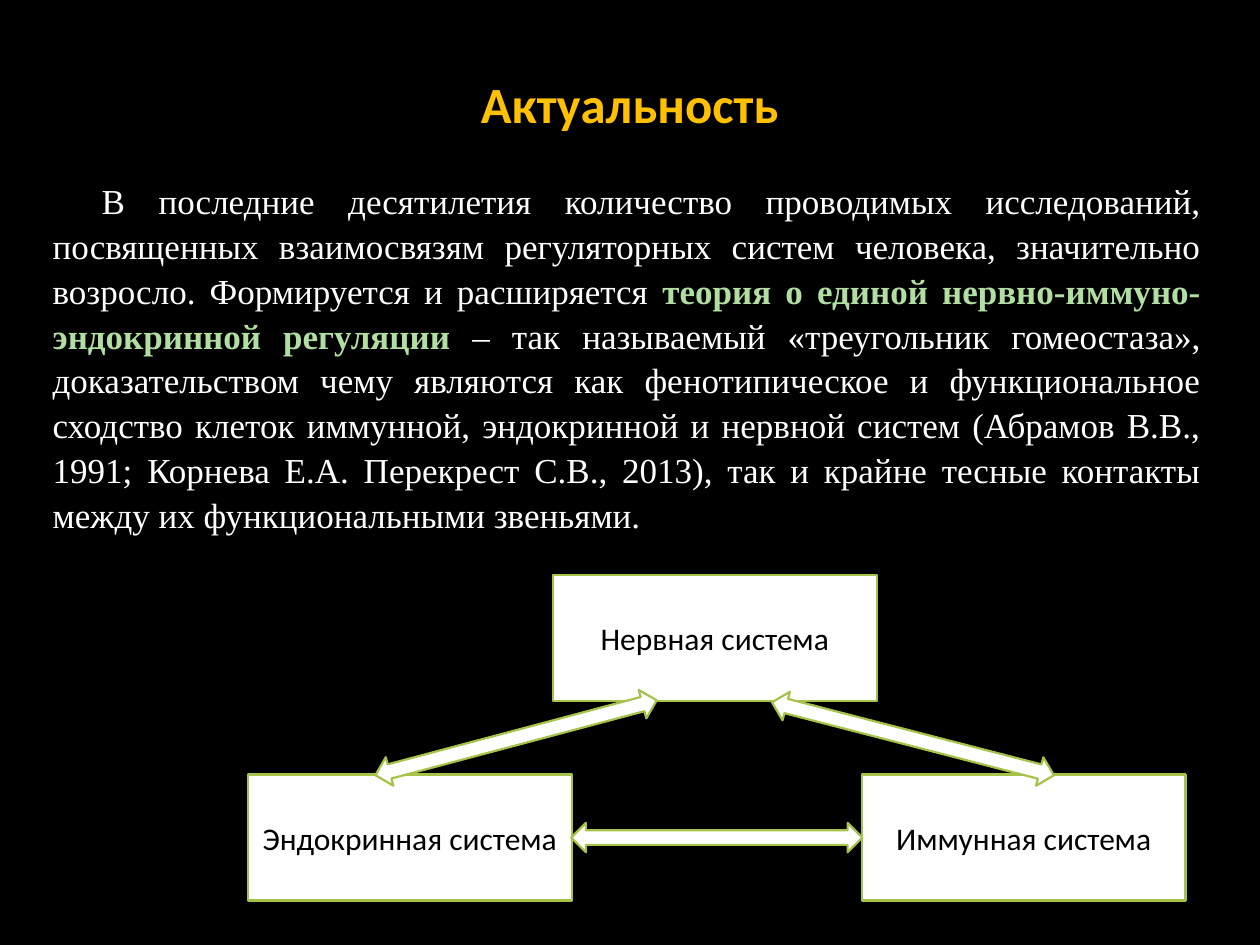
"""Build the slide on the links between the nervous, endocrine and immune systems."""
from pptx import Presentation
from pptx import util as u
from pptx.dml import color
from pptx.enum import shapes, text

COLORS = {
    "background": "000000",
    "title": "FFC000",
    "body": "FFFFFF",
    "accent": "B0DFA1",
    "fill": "FFFFFF",
    "outline": "A5C249",
    "label": "000000",
}
TITLE = [("Актуальность", "title", True)]
BODY = [
    ("В последние десятилетия количество проводимых исследований, посвященных "
     "взаимосвязям регуляторных систем человека, значительно возросло. "
     "Формируется и расширяется ", "body", False),
    ("теория о единой нервно-иммуно-эндокринной регуляции", "accent", True),
    (" – так называемый «треугольник гомеостаза», доказательством чему являются "
     "как фенотипическое и функциональное сходство клеток иммунной, эндокринной "
     "и нервной систем (Абрамов В.В., 1991; Корнева Е.А. Перекрест С.В., 2013), "
     "так и крайне тесные контакты между их функциональными звеньями.", "body", False),
]
BOX_SIZE = (185, 72)
SYSTEMS = [
    ("Эндокринная система", 141.7, 442.6),
    ("Нервная система", 316, 328.8),
    ("Иммунная система", 492.5, 442.6),
]
ARROW_SIZE = (166.4, 16.8)
ARROWS = [(326.4, 470.2, 0), (211.7, 413.2, -14.9), (438.5, 413.8, 14.5)]


def rgb(name):
    return color.RGBColor.from_string(COLORS[name])


def write(box, spans, size, font="Calibri", align=text.PP_ALIGN.CENTER,
          anchor=text.MSO_ANCHOR.MIDDLE, indent=0, spacing=None, after=0):
    frame = box.text_frame
    frame.word_wrap = True
    frame.vertical_anchor = anchor
    para = frame.paragraphs[0]
    para.alignment = align
    para.space_after = u.Pt(after)
    if spacing:
        para.line_spacing = spacing
    if indent:
        properties = para._p.get_or_add_pPr()
        properties.set("marL", "0")
        properties.set("indent", str(u.Pt(indent)))
    for words, ink, bold in spans:
        span = para.add_run()
        span.text = words
        span.font.name = font
        span.font.size = u.Pt(size)
        span.font.bold = bold
        span.font.color.rgb = rgb(ink)


def add_outlined(page, kind, left, top, size):
    shape = page.shapes.add_shape(kind, *map(u.Pt, (left, top, *size)))
    shape.shadow.inherit = False
    shape.fill.solid()
    shape.fill.fore_color.rgb = rgb("fill")
    shape.line.color.rgb = rgb("outline")
    shape.line.width = u.Pt(1.25)
    return shape


def main():
    deck = Presentation()
    deck.slide_width, deck.slide_height = u.Pt(720), u.Pt(540)
    page = deck.slides.add_slide(deck.slide_layouts[6])
    page.background.fill.solid()
    page.background.fill.fore_color.rgb = rgb("background")

    title = page.shapes.add_textbox(*map(u.Pt, (36, 13.7, 648, 90)))
    write(title, TITLE, 29)
    body = page.shapes.add_textbox(*map(u.Pt, (23, 97.2, 670.3, 213)))
    write(body, BODY, 20, font="Times New Roman", align=text.PP_ALIGN.JUSTIFY,
          anchor=text.MSO_ANCHOR.TOP, indent=28, spacing=1.07, after=8)

    for name, left, top in SYSTEMS:
        box = add_outlined(page, shapes.MSO_SHAPE.RECTANGLE, left, top, BOX_SIZE)
        write(box, [(name, "label", False)], 18)
    for left, top, angle in ARROWS:
        arrow = add_outlined(page, shapes.MSO_SHAPE.LEFT_RIGHT_ARROW, left, top, ARROW_SIZE)
        arrow.rotation = angle

    deck.save("out.pptx")


if __name__ == "__main__":
    main()
